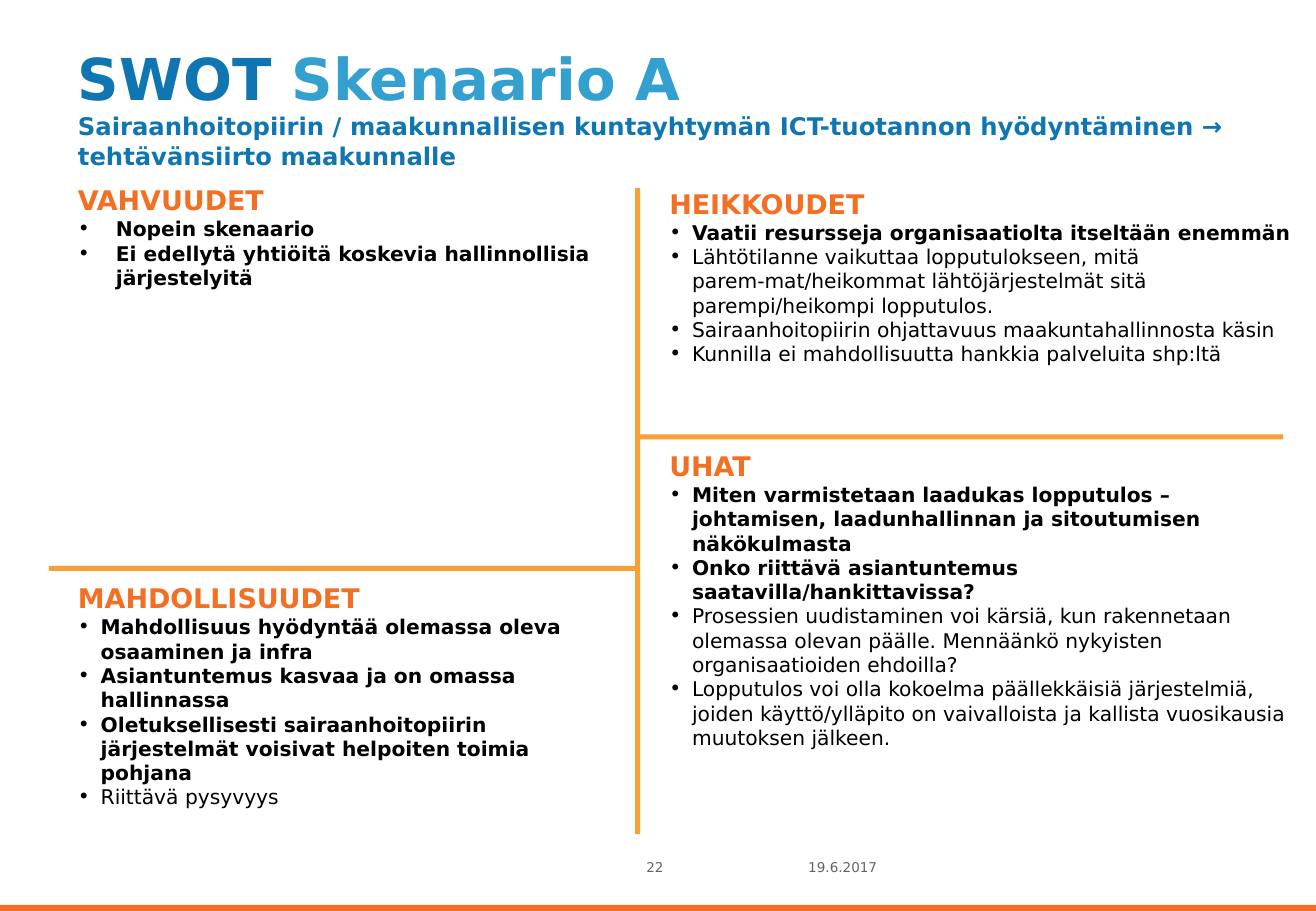
from pptx import Presentation
from pptx.dml.color import RGBColor
from pptx.enum.lang import MSO_LANGUAGE_ID
from pptx.enum.shapes import MSO_SHAPE
from pptx.enum.text import MSO_ANCHOR, MSO_AUTO_SIZE, PP_ALIGN
from pptx.oxml.ns import qn
from pptx.util import Pt
from lxml import etree

RECTANGLE = MSO_SHAPE.RECTANGLE
TOP = MSO_ANCHOR.TOP
NO_FIT = MSO_AUTO_SIZE.NONE
LEFT = PP_ALIGN.LEFT
FINNISH = MSO_LANGUAGE_ID.FINNISH
COMPARISON_LAYOUT = 4

FONT = "DejaVu Sans"
BLUE, SKY = "0F76B1", "34A0CF"
ORANGE, AMBER = "F27024", "F99F35"
BLACK, GREY = "000000", "616365"

WIDTH, HEIGHT = 780, 540
LEFT_COLUMN, RIGHT_COLUMN = 39, 389.5
DIVIDER = 3


def color(hex_value):
    return RGBColor.from_string(hex_value)


class SwotSlide:
    def __init__(self, presentation):
        layout = presentation.slide_layouts[COMPARISON_LAYOUT]
        self.slide = presentation.slides.add_slide(layout)

    def style(self, run, size, hex_value, bold):
        font = run.font
        font.name, font.size, font.bold = FONT, Pt(size), bold
        font.color.rgb = color(hex_value)
        font.language_id = FINNISH

    def place(self, shape, box):
        shape.left, shape.top, shape.width, shape.height = map(Pt, box)
        frame = shape.text_frame
        frame.word_wrap, frame.auto_size = True, NO_FIT
        frame.vertical_anchor = TOP
        return frame

    def paragraph(self, paragraph, indent=0, bulleted=False, spacing=1.0):
        properties = paragraph._p.get_or_add_pPr()
        properties.set("marL", str(Pt(indent)))
        properties.set("indent", str(-Pt(indent)))
        if bulleted:
            font = etree.SubElement(properties, qn("a:buFont"))
            font.set("typeface", FONT)
            etree.SubElement(properties, qn("a:buChar")).set("char", "•")
        else:
            etree.SubElement(properties, qn("a:buNone"))
        paragraph.alignment = LEFT
        paragraph.line_spacing = spacing
        paragraph.space_before = paragraph.space_after = Pt(0)

    def title(self, box, heading, subtitle):
        frame = self.place(self.slide.shapes.title, box)
        first, second = frame.paragraphs[0], frame.add_paragraph()
        for paragraph in (first, second):
            self.paragraph(paragraph)
        for text, hex_value in heading:
            run = first.add_run()
            run.text = text
            self.style(run, 34.2, hex_value, True)
        second.text = subtitle
        self.style(second.runs[0], 14.4, BLUE, True)

    def quadrant(self, index, box, heading, indent, strong, plain):
        frame = self.place(self.slide.placeholders[index], box)
        first = frame.paragraphs[0]
        first.text = heading
        self.paragraph(first, spacing=0.9)
        self.style(first.runs[0], 16, ORANGE, True)
        for number, text in enumerate(strong + plain):
            item = frame.add_paragraph()
            item.text = text
            self.paragraph(item, indent, bulleted=True)
            self.style(item.runs[0], 12, BLACK, number < len(strong))

    def label(self, box, text):
        frame = self.place(self.slide.shapes.add_textbox(0, 0, 0, 0), box)
        frame.text = text
        self.style(frame.paragraphs[0].runs[0], 8, GREY, False)

    def bar(self, box, hex_value):
        bar = self.slide.shapes.add_shape(RECTANGLE, *map(Pt, box))
        bar.shadow.inherit = False
        bar.fill.solid()
        bar.fill.fore_color.rgb = color(hex_value)
        bar.line.fill.background()


def main():
    presentation = Presentation()
    presentation.slide_width, presentation.slide_height = Pt(WIDTH), Pt(HEIGHT)
    swot = SwotSlide(presentation)

    # Footer
    swot.label((472, 505.5, 69, 29), "19.6.2017")
    swot.label((376, 505.5, 69, 29), "22")
    swot.bar((0, 536.4, WIDTH, 3.6), ORANGE)

    # Title
    swot.title(
        (LEFT_COLUMN, 21.5, 702, 86),
        [("SWOT ", BLUE), ("Skenaario A", SKY)],
        "Sairaanhoitopiirin / maakunnallisen kuntayhtymän ICT-tuotannon "
        "hyödyntäminen → tehtävänsiirto maakunnalle",
    )

    # Quadrants
    swot.quadrant(
        1, (LEFT_COLUMN, 107.5, 337, 68), "VAHVUUDET", 22.5,
        ["Nopein skenaario",
         "Ei edellytä yhtiöitä koskevia hallinnollisia järjestelyitä"],
        [],
    )
    swot.quadrant(
        2, (RIGHT_COLUMN, 109.5, 390.5, 112), "HEIKKOUDET", 13.5,
        ["Vaatii resursseja organisaatiolta itseltään enemmän"],
        ["Lähtötilanne vaikuttaa lopputulokseen, mitä parem-mat/heikommat "
         "lähtöjärjestelmät sitä parempi/heikompi lopputulos.",
         "Sairaanhoitopiirin ohjattavuus maakuntahallinnosta käsin",
         "Kunnilla ei mahdollisuutta hankkia palveluita shp:ltä"],
    )
    swot.quadrant(
        3, (LEFT_COLUMN, 343.5, 340, 141), "MAHDOLLISUUDET", 13.5,
        ["Mahdollisuus hyödyntää olemassa oleva osaaminen ja infra",
         "Asiantuntemus kasvaa ja on omassa hallinnassa",
         "Oletuksellisesti sairaanhoitopiirin järjestelmät voisivat "
         "helpoiten toimia pohjana"],
        ["Riittävä pysyvyys"],
    )
    swot.quadrant(
        4, (RIGHT_COLUMN, 265, 382.5, 201.5), "UHAT", 13.5,
        ["Miten varmistetaan laadukas lopputulos – johtamisen, "
         "laadunhallinnan ja sitoutumisen näkökulmasta",
         "Onko riittävä asiantuntemus saatavilla/hankittavissa?"],
        ["Prosessien uudistaminen voi kärsiä, kun rakennetaan olemassa "
         "olevan päälle. Mennäänkö nykyisten organisaatioiden ehdoilla?",
         "Lopputulos voi olla kokoelma päällekkäisiä järjestelmiä, joiden "
         "käyttö/ylläpito on vaivalloista ja kallista vuosikausia "
         "muutoksen jälkeen."],
    )

    # Dividers
    swot.bar((376.5, 111.5, DIVIDER, 383), AMBER)
    swot.bar((29, 335.5, 347.5, DIVIDER), AMBER)
    swot.bar((378, 257.5, 382.5, DIVIDER), AMBER)

    presentation.save("out.pptx")


if __name__ == "__main__":
    main()
